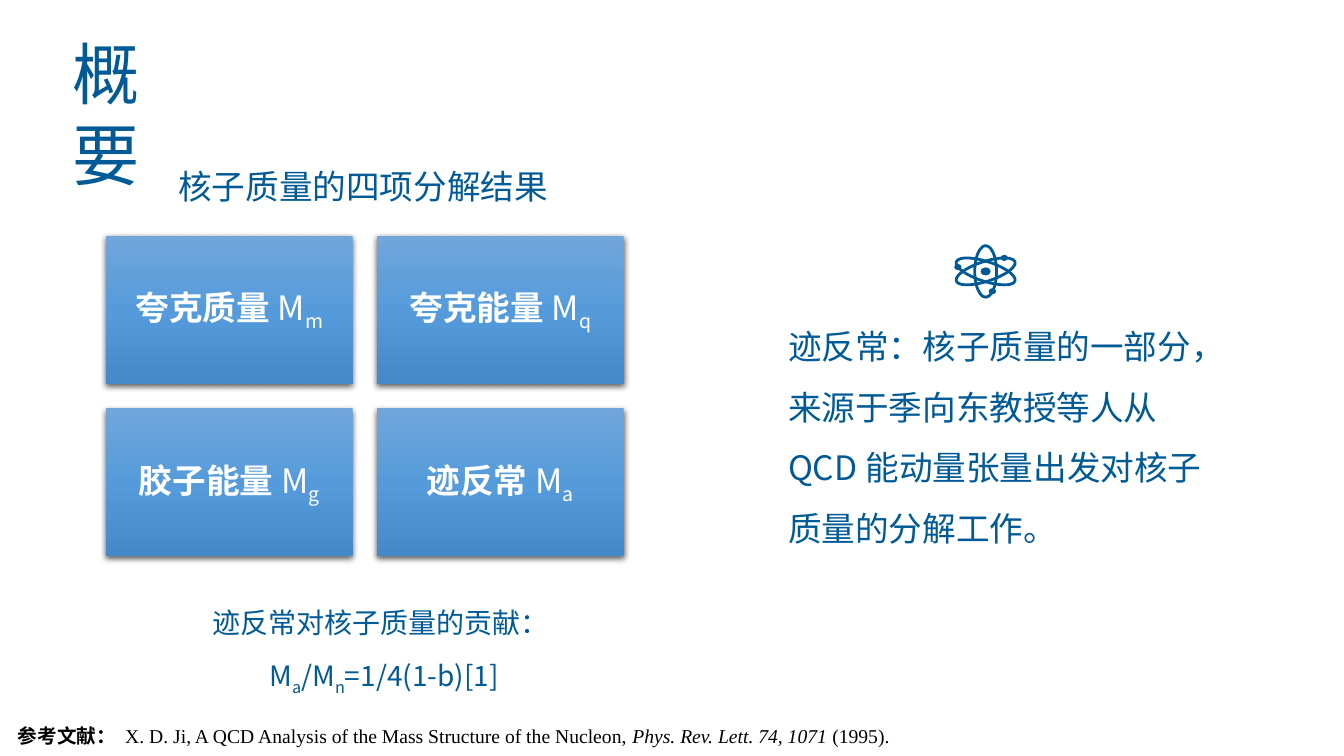
from lxml import etree
from pptx import Presentation
from pptx import util as u
from pptx.dml.color import RGBColor
from pptx.enum import shapes, text
from pptx.oxml import parse_xml
from pptx.oxml.ns import nsdecls, qn

NAVY = RGBColor(0x00, 0x5A, 0x95)
WHITE = RGBColor(0xFF, 0xFF, 0xFF)
BLACK = RGBColor(0x00, 0x00, 0x00)
TILE_STOPS = (
    (0, RGBColor(0x71, 0xA6, 0xDB)),
    (50, RGBColor(0x55, 0x9B, 0xDB)),
    (100, RGBColor(0x44, 0x8A, 0xCA)),
)
SANS = "Noto Sans CJK SC"
SERIF = "Times New Roman"


def box(left, top, width, height):
    return u.Cm(left), u.Cm(top), u.Cm(width), u.Cm(height)


def add_run(paragraph, words, size, color, bold=False, italic=False, sub=False, latin=SANS):
    run = paragraph.add_run()
    run.text = words
    font = run.font
    font.size, font.bold, font.italic = u.Pt(size), bold, italic
    font.color.rgb = color
    font.name = latin
    properties = run._r.get_or_add_rPr()
    etree.SubElement(properties, qn("a:ea")).set("typeface", SANS)
    if sub:
        properties.set("baseline", "-25000")


def add_words(slide, place, runs, size, color, align=text.PP_ALIGN.LEFT, spacing=1.0):
    frame = slide.shapes.add_textbox(*box(*place)).text_frame
    frame.word_wrap = True
    paragraph = frame.paragraphs[0]
    paragraph.alignment = align
    paragraph.line_spacing = spacing
    for words, style in runs:
        add_run(paragraph, words, size, color, **style)


def set_title(slide, words):
    title = slide.shapes.title
    title.left, title.top, title.width, title.height = box(1.57, 0.69, 3.89, 2.31)
    frame = title.text_frame
    frame.word_wrap = False
    frame.auto_size = text.MSO_AUTO_SIZE.NONE
    frame.vertical_anchor = text.MSO_ANCHOR.TOP
    frame.paragraphs[0].alignment = text.PP_ALIGN.LEFT
    add_run(frame.paragraphs[0], words, 48, NAVY)


def add_tile(slide, left, top, term, index):
    tile = slide.shapes.add_shape(
        shapes.MSO_SHAPE.RECTANGLE, *box(left, top, 6.22, 3.73))
    tile.line.fill.background()
    stops = "".join(
        f'<a:gs pos="{position * 1000}"><a:srgbClr val="{color}"/></a:gs>'
        for position, color in TILE_STOPS)
    outline = tile.line._get_or_add_ln()
    outline.addprevious(parse_xml(
        f'<a:gradFill {nsdecls("a")} rotWithShape="1"><a:gsLst>{stops}</a:gsLst>'
        '<a:lin ang="5400000" scaled="0"/></a:gradFill>'))
    outline.addnext(parse_xml(
        f'<a:effectLst {nsdecls("a")}><a:outerShdw blurRad="57150" dist="19050" '
        'dir="5400000" algn="ctr" rotWithShape="0"><a:srgbClr val="000000">'
        '<a:alpha val="63000"/></a:srgbClr></a:outerShdw></a:effectLst>'))
    frame = tile.text_frame
    frame.word_wrap = True
    frame.vertical_anchor = text.MSO_ANCHOR.MIDDLE
    paragraph = frame.paragraphs[0]
    paragraph.alignment = text.PP_ALIGN.CENTER
    add_run(paragraph, term, 24, WHITE, bold=True)
    add_run(paragraph, "M", 24, WHITE)
    add_run(paragraph, index, 24, WHITE, sub=True)


def add_oval(slide, center_x, center_y, width, height):
    oval = slide.shapes.add_shape(
        shapes.MSO_SHAPE.OVAL,
        *box(center_x - width / 2, center_y - height / 2, width, height))
    oval.shadow.inherit = False
    return oval


def add_atom(slide, center_x, center_y):
    for width, height, tilt in ((0.55, 1.3, 0), (1.56, 0.5, 18), (1.56, 0.5, -18)):
        orbit = add_oval(slide, center_x, center_y, width, height)
        orbit.rotation = tilt
        orbit.fill.background()
        orbit.line.color.rgb = NAVY
        orbit.line.width = u.Pt(2)
    particles = (
        (0, 0, 0.25, 0.2),
        (0.47, -0.34, 0.18, 0.15),
        (-0.7, -0.11, 0.18, 0.15),
        (0.17, 0.5, 0.18, 0.15),
    )
    for shift_x, shift_y, width, height in particles:
        particle = add_oval(slide, center_x + shift_x, center_y + shift_y, width, height)
        particle.fill.solid()
        particle.fill.fore_color.rgb = NAVY
        particle.line.fill.background()


def main():
    deck = Presentation()
    deck.slide_width, deck.slide_height = u.Cm(33.87), u.Cm(19.05)
    slide = deck.slides.add_slide(deck.slide_layouts.get_by_name("Title Only"))
    center = text.PP_ALIGN.CENTER

    set_title(slide, "概要")
    add_words(slide, (4.17, 3.56, 9.96, 1.8), [("核子质量的四项分解结果", {})],
              24, NAVY, center, 1.5)

    mass_terms = (("夸克质量", "m"), ("夸克能量", "q"), ("胶子能量", "g"), ("迹反常", "a"))
    for place, (term, index) in enumerate(mass_terms):
        row, column = divmod(place, 2)
        add_tile(slide, 2.67 + 6.83 * column, 5.94 + 4.35 * row, term, index)

    add_atom(slide, 24.84, 6.84)
    add_words(slide, (19.61, 7.59, 11.4, 6.4),
              [("迹反常：核子质量的一部分，来源于季向东教授等人从QCD能动量张量出发对核子质量的分解工作。", {})],
              24, NAVY, spacing=1.5)

    contribution = [
        ("迹反常对核子质量的贡献：M", {}),
        ("a", {"sub": True}),
        ("/M", {}),
        ("n", {"sub": True}),
        ("=1/4(1-b)[1]", {}),
    ]
    add_words(slide, (4.75, 14.71, 9.86, 2.82), contribution, 20, NAVY, center, 1.5)

    reference = [
        ("参考文献： ", {"bold": True}),
        ("X. D. Ji, A QCD Analysis of the Mass Structure of the Nucleon, ", {"latin": SERIF}),
        ("Phys. Rev. Lett. 74, 1071", {"latin": SERIF, "italic": True}),
        (" (1995).", {"latin": SERIF}),
    ]
    add_words(slide, (0.2, 18.11, 32.94, 1.14), reference, 14, BLACK)
    deck.save("out.pptx")


if __name__ == "__main__":
    main()
